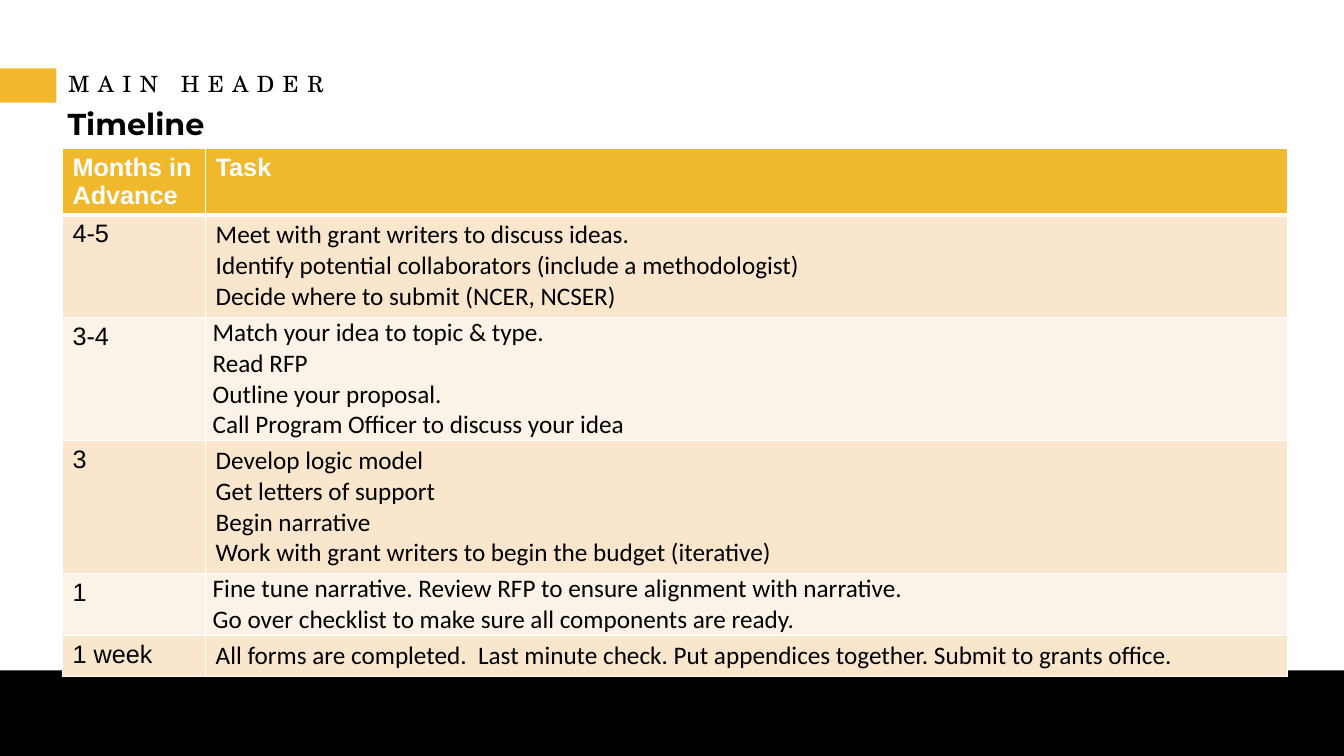
import dataclasses

import pptx
import pptx.dml.color
import pptx.enum.shapes
import pptx.enum.text
import pptx.oxml
import pptx.oxml.ns
import pptx.util

Inches = pptx.util.Inches
Pt = pptx.util.Pt
RGBColor = pptx.dml.color.RGBColor

BLACK = RGBColor(0x00, 0x00, 0x00)
WHITE = RGBColor(0xFF, 0xFF, 0xFF)
GOLD = RGBColor(0xF1, 0xB8, 0x2D)
HEADER_GOLD = RGBColor(0xF0, 0xB8, 0x2C)
BAND_DARK = RGBColor(0xF9, 0xE6, 0xCD)
BAND_LIGHT = RGBColor(0xFC, 0xF3, 0xE8)


@dataclasses.dataclass(frozen=True)
class Bar:
    left: float
    top: float
    width: float
    height: float
    color: RGBColor


@dataclasses.dataclass(frozen=True)
class Stage:
    months: str
    tasks: tuple[str, ...]
    height: float
    tight: bool = False


BARS = (
    Bar(0, 6.65, 13.33, 0.85, BLACK),
    Bar(0, 0.68, 0.56, 0.34, GOLD),
)
STAGES = (
    Stage("Months in Advance", ("Task",), 0.65),
    Stage("4-5", (
        "Meet with grant writers to discuss ideas.",
        "Identify potential collaborators (include a methodologist)",
        "Decide where to submit (NCER, NCSER)",
    ), 1.02),
    Stage("3-4", (
        "Match your idea to topic & type.",
        "Read RFP",
        "Outline your proposal.",
        "Call Program Officer to discuss your idea",
    ), 1.22, True),
    Stage("3", (
        "Develop logic model",
        "Get letters of support",
        "Begin narrative",
        "Work with grant writers to begin the budget (iterative)",
    ), 1.32),
    Stage("1", (
        "Fine tune narrative. Review RFP to ensure alignment with narrative.",
        "Go over checklist to make sure all components are ready.",
    ), 0.61, True),
    Stage("1 week", (
        "All forms are completed.  Last minute check. Put appendices together. Submit to grants office.",
    ), 0.41),
)
COLUMN_WIDTHS = (1.42, 10.73)


def draw_bar(page, bar: Bar) -> None:
    shape = page.shapes.add_shape(
        pptx.enum.shapes.MSO_SHAPE.RECTANGLE,
        Inches(bar.left), Inches(bar.top), Inches(bar.width), Inches(bar.height))
    shape.shadow.inherit = False
    shape.fill.solid()
    shape.fill.fore_color.rgb = bar.color
    shape.line.fill.background()


def add_span(para, text: str, font: str, size: float, color: RGBColor, bold: bool = False):
    span = para.add_run()
    span.text = text
    span.font.name = font
    span.font.size = Pt(size)
    span.font.bold = bold
    span.font.color.rgb = color
    return span


def place_heading(box, left: float, top: float, height: float):
    box.left, box.top = Inches(left), Inches(top)
    box.width, box.height = Inches(12.14), Inches(height)
    frame = box.text_frame
    frame.word_wrap = True
    frame.auto_size = pptx.enum.text.MSO_AUTO_SIZE.NONE
    frame.vertical_anchor = pptx.enum.text.MSO_ANCHOR.MIDDLE
    para = frame.paragraphs[0]
    para.alignment = pptx.enum.text.PP_ALIGN.LEFT
    para.line_spacing = 0.9
    return para


def draw_borders(cell, top: float, bottom: float) -> None:
    properties = cell._tc.get_or_add_tcPr()
    for side, points in (("L", 1), ("R", 1), ("T", top), ("B", bottom)):
        properties.append(pptx.oxml.parse_xml(
            f'<a:ln{side} {pptx.oxml.ns.nsdecls("a")} w="{Pt(points)}">'
            f'<a:solidFill><a:srgbClr val="{WHITE}"/></a:solidFill></a:ln{side}>'))


def fill_cell(cell, lines: tuple[str, ...], font: str, row: int) -> None:
    header = row == 0
    draw_borders(cell, 3 if row == 1 else 1, 3 if header else 1)
    cell.fill.solid()
    cell.fill.fore_color.rgb = HEADER_GOLD if header else BAND_DARK if row % 2 else BAND_LIGHT
    frame = cell.text_frame
    for index, line in enumerate(lines):
        para = frame.add_paragraph() if index else frame.paragraphs[0]
        add_span(para, line, font, 18, WHITE if header else BLACK, header)


def draw_timeline(page) -> None:
    table = page.shapes.add_table(
        len(STAGES), len(COLUMN_WIDTHS), Inches(0.62), Inches(1.47),
        Inches(sum(COLUMN_WIDTHS)), Inches(sum(stage.height for stage in STAGES))).table
    for column, width in zip(table.columns, COLUMN_WIDTHS):
        column.width = Inches(width)
    for row, stage in enumerate(STAGES):
        table.rows[row].height = Inches(stage.height)
        months, tasks = table.cell(row, 0), table.cell(row, 1)
        fill_cell(months, (stage.months,), "Arial", row)
        fill_cell(tasks, stage.tasks, "Calibri" if row else "Arial", row)
        if stage.tight:
            tasks.margin_left = tasks.margin_right = Inches(0.07)
            tasks.margin_top = tasks.margin_bottom = 0


def main() -> None:
    deck = pptx.Presentation()
    deck.slide_width, deck.slide_height = Inches(13.33), Inches(7.5)
    page = deck.slides.add_slide(deck.slide_layouts[5])
    for bar in BARS:
        draw_bar(page, bar)
    title = place_heading(page.shapes.title, 0.57, 1.02, 0.45)
    add_span(title, "Timeline", "Montserrat", 21.6, BLACK, True)
    draw_timeline(page)
    header_box = page.shapes.add_textbox(0, 0, Inches(1), Inches(1))
    header = place_heading(header_box, 0.58, 0.68, 0.34)
    span = add_span(header, "MAIN HEADER", "TeX Gyre Schola", 16, BLACK)
    span.font._element.set("spc", "600")
    deck.save("out.pptx")


if __name__ == "__main__":
    main()
